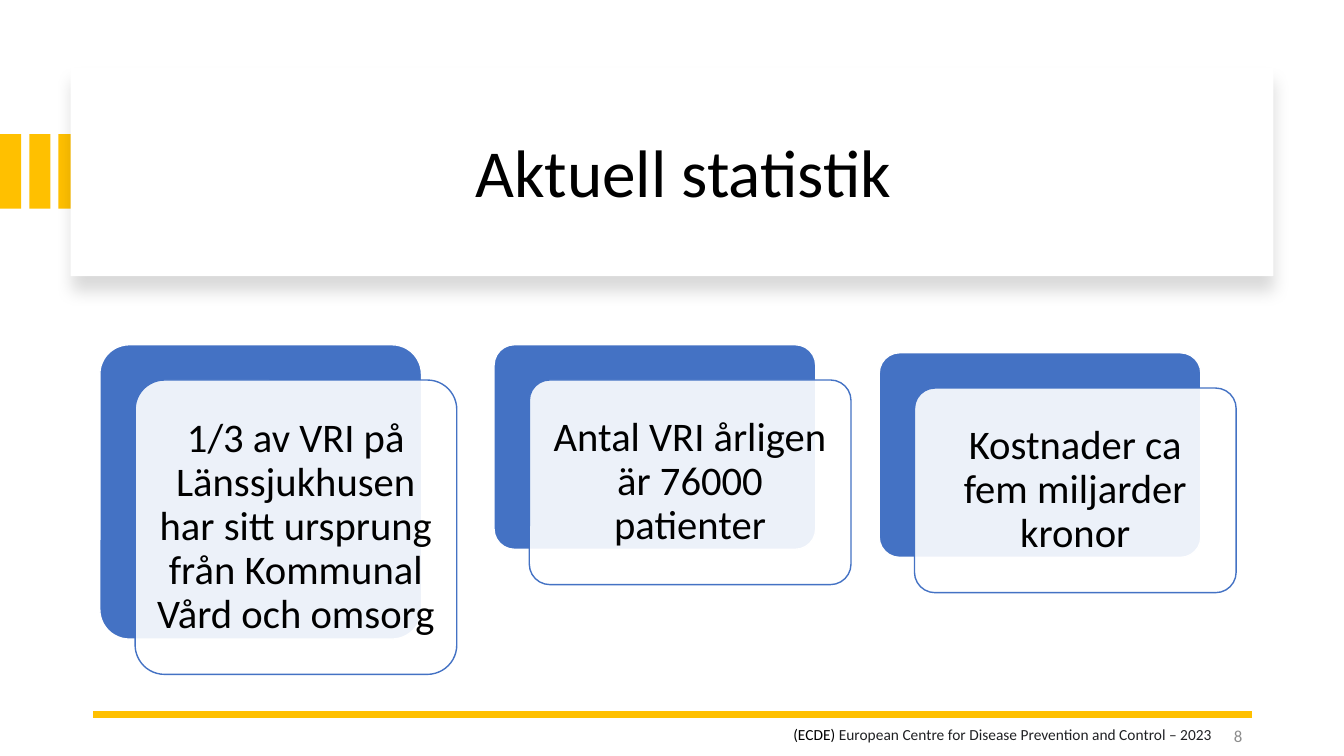
from dataclasses import dataclass

from lxml import etree
from pptx import Presentation
from pptx import util as u
from pptx.dml.color import RGBColor
from pptx.enum import shapes, text
from pptx.oxml.ns import qn


@dataclass(frozen=True)
class Theme:
    font: str = "Calibri"
    white: str = "FFFFFF"
    black: str = "000000"
    ink: str = "202124"
    grey: str = "8C8C8C"
    gold: str = "FFC000"
    blue: str = "4472C4"
    title_size: int = 48
    card_size: int = 29
    number_size: int = 12
    source_size: int = 11


class SlideBuilder:
    def __init__(self, page, theme):
        self.page = page
        self.theme = theme

    def place(self, box, left, top, width, height):
        box.left, box.top = u.Inches(left), u.Inches(top)
        box.width, box.height = u.Inches(width), u.Inches(height)

    def add_words(self, box, spans, size, align, anchor, line_spacing=None):
        frame = box.text_frame
        frame.word_wrap = True
        frame.auto_size = text.MSO_AUTO_SIZE.NONE
        frame.vertical_anchor = anchor
        para = frame.paragraphs[0]
        para.alignment = align
        para.line_spacing = line_spacing
        for words, color in spans:
            span = para.add_run()
            span.text = words
            span.font.name = self.theme.font
            span.font.size = u.Pt(size)
            span.font.color.rgb = RGBColor.from_string(color)

    def title(self, words, *place):
        box = self.page.shapes.title
        self.place(box, *place)
        self.add_words(box, [(words, self.theme.black)], self.theme.title_size,
                       text.PP_ALIGN.CENTER, text.MSO_ANCHOR.MIDDLE, 0.9)
        # Bring the title in front of the panel
        box.element.getparent().append(box.element)

    def label(self, spans, size, align, anchor, *place):
        box = self.page.shapes.add_textbox(*map(u.Inches, place))
        self.add_words(box, spans, size, align, anchor)

    def block(self, fill, *place, line=None, corner=None):
        kind = shapes.MSO_SHAPE.ROUNDED_RECTANGLE if corner else shapes.MSO_SHAPE.RECTANGLE
        box = self.page.shapes.add_shape(kind, *map(u.Inches, place))
        box.shadow.inherit = False
        if corner:
            box.adjustments[0] = corner
        box.fill.solid()
        box.fill.fore_color.rgb = RGBColor.from_string(fill)
        if line:
            box.line.color.rgb = RGBColor.from_string(line)
            box.line.width = u.Pt(1)
        else:
            box.line.fill.background()
        return box

    def panel(self, *place):
        box = self.block(self.theme.white, *place)
        effects = box.element.spPr.find(qn("a:effectLst"))
        shadow = etree.SubElement(effects, qn("a:outerShdw"), blurRad=str(u.Pt(11)),
                                  dist=str(u.Pt(10)), dir="5400000", algn="t", rotWithShape="0")
        color = etree.SubElement(shadow, qn("a:srgbClr"), val=self.theme.black)
        etree.SubElement(color, qn("a:alpha"), val="15000")

    def card(self, words, left, top, height):
        width, shift, corner = 3.19, 0.35, 0.1
        theme = self.theme
        self.block(theme.blue, left, top, width, height, line=theme.white, corner=corner)
        front = self.block(theme.white, left + shift, top + shift, width, height,
                           line=theme.blue, corner=corner)
        color = front.element.spPr.find(qn("a:solidFill")).find(qn("a:srgbClr"))
        etree.SubElement(color, qn("a:alpha"), val="90000")
        frame = front.text_frame
        frame.margin_left = frame.margin_right = u.Inches(0.12)
        frame.margin_top = frame.margin_bottom = u.Inches(0.12)
        self.add_words(front, [(words, theme.black)], theme.card_size,
                       text.PP_ALIGN.CENTER, text.MSO_ANCHOR.MIDDLE, 0.9)

    def rule(self, start, end, top):
        line = self.page.shapes.add_connector(
            shapes.MSO_CONNECTOR.STRAIGHT, *map(u.Inches, (start, top, end, top)))
        line.line.color.rgb = RGBColor.from_string(self.theme.gold)
        line.line.width = u.Pt(4.5)
        etree.SubElement(line.element.spPr, qn("a:effectLst"))


def main():
    deck = Presentation()
    deck.slide_width, deck.slide_height = u.Inches(13.33), u.Inches(7.5)
    theme = Theme()
    builder = SlideBuilder(deck.slides.add_slide(deck.slide_layouts[5]), theme)

    # Gold bars and title panel
    for index in range(3):
        builder.block(theme.gold, index * 0.29, 1.33, 0.21, 0.74)
    builder.panel(0.7, 0.67, 11.93, 2.07)
    builder.title("Aktuell statistik", 1.29, 0.89, 10.98, 1.7)

    # Statistics cards
    cards = [
        ("1/3 av VRI på Länssjukhusen har sitt ursprung från Kommunal Vård och omsorg",
         0.99, 3.42, 2.92),
        ("Antal VRI årligen är 76000 patienter", 4.9, 3.42, 2.03),
        ("Kostnader ca fem miljarder kronor", 8.72, 3.5, 2.03),
    ]
    for card in cards:
        builder.card(*card)

    # Footer: rule, page number and source
    builder.rule(12.42, 0.92, 7.09)
    builder.label([("8", theme.grey)], theme.number_size,
                  text.PP_ALIGN.RIGHT, text.MSO_ANCHOR.MIDDLE, 9.42, 7.1, 3, 0.4)
    source = [("(ECDE) ", theme.black),
              ("European Centre for Disease Prevention and Control – 2023", theme.ink)]
    builder.label(source, theme.source_size,
                  text.PP_ALIGN.LEFT, text.MSO_ANCHOR.TOP, 7.77, 7.14, 4.57, 0.29)

    deck.save("out.pptx")


if __name__ == "__main__":
    main()
